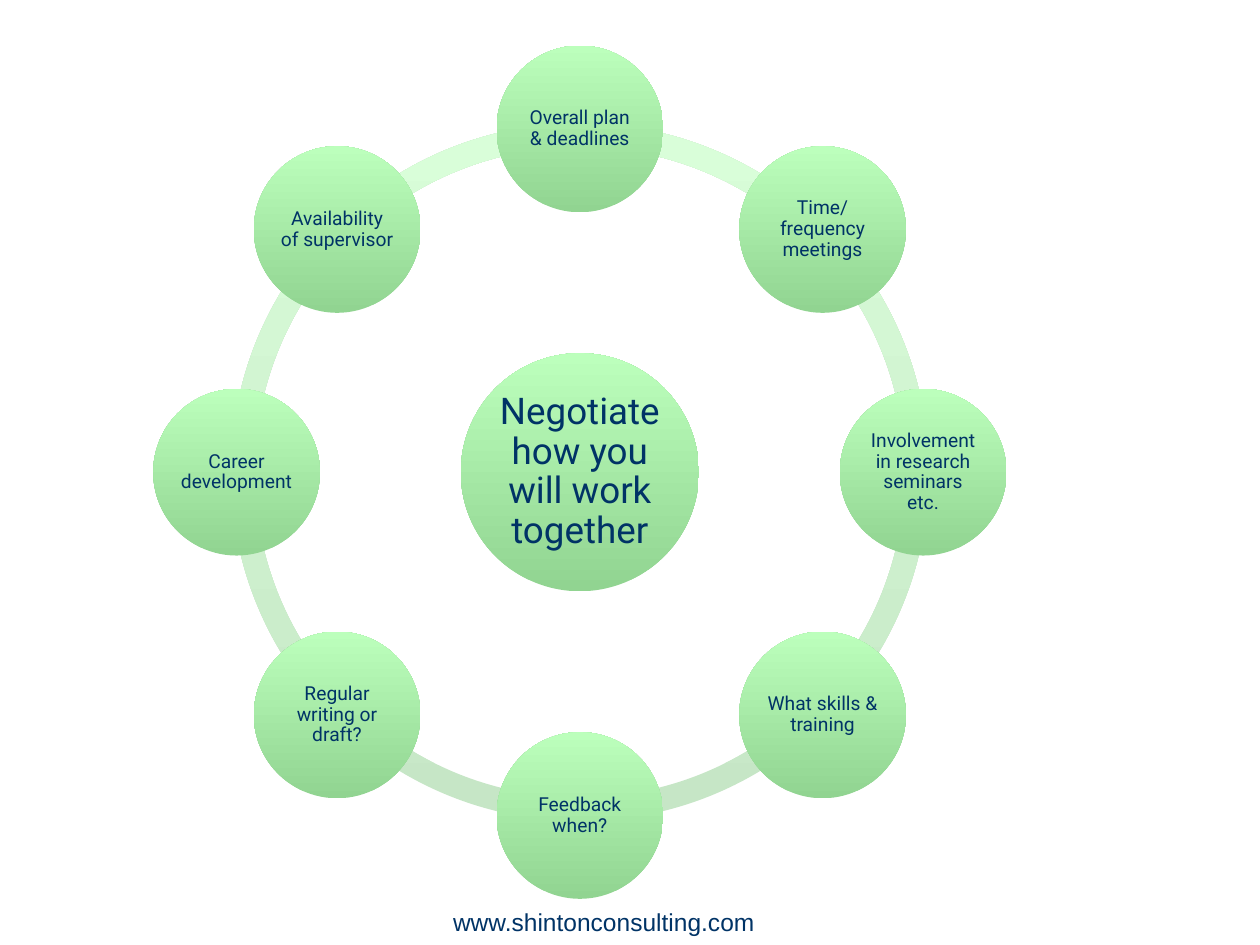
from math import cos, radians, sin

from pptx import Presentation
from pptx.dml.color import RGBColor
from pptx.enum.shapes import MSO_SHAPE as Preset
from pptx.enum.text import MSO_ANCHOR as Anchor, PP_ALIGN as Align
from pptx.util import Cm, Pt

INK = "003366"
TOPICS = [
    "Overall plan & deadlines",
    "Time/frequency meetings",
    "Involvement in research seminars etc.",
    "What skills & training",
    "Feedback when?",
    "Regular writing or draft?",
    "Career development",
    "Availability of supervisor",
]
FULL_TURN = 216


def rgb(color):
    return RGBColor.from_string(color)


def write(shape, words, font_name, size, inset, anchor):
    frame = shape.text_frame
    frame.word_wrap = True
    frame.vertical_anchor = anchor
    frame.margin_left = frame.margin_right = Cm(inset)
    frame.margin_top = frame.margin_bottom = Cm(inset)
    paragraph = frame.paragraphs[0]
    paragraph.text = words
    paragraph.alignment = Align.CENTER
    paragraph.font.name = font_name
    paragraph.font.size = Pt(size)
    paragraph.font.color.rgb = rgb(INK)
    return paragraph


def add_shaded(shapes, preset, center_x, center_y, diameter, bottom, top):
    shape = shapes.add_shape(
        preset, Cm(center_x - diameter / 2), Cm(center_y - diameter / 2),
        Cm(diameter), Cm(diameter))
    shape.shadow.inherit = False
    shape.line.fill.background()
    shape.fill.gradient()
    shape.fill.gradient_angle = 90
    for stop, color in zip(shape.fill.gradient_stops, (bottom, top)):
        stop.color.rgb = rgb(color)
    return shape


def add_circle(shapes, words, center_x, center_y, diameter, size, inset):
    circle = add_shaded(shapes, Preset.OVAL, center_x, center_y, diameter,
                        "91D491", "BCFFBC")
    write(circle, words, "Roboto", size, inset, Anchor.MIDDLE).line_spacing = 0.9


def add_wheel(slide, left, top, extent):
    shapes = slide.shapes.add_group_shape().shapes
    center_x, center_y = left + extent / 2, top + extent / 2
    node = 3.36
    orbit = (extent - node) / 2
    sweep = FULL_TURN / len(TOPICS)

    for index in range(len(TOPICS)):
        start = (135 - index * sweep) % FULL_TURN
        arc = add_shaded(shapes, Preset.BLOCK_ARC, center_x, center_y, 14.07,
                         "C6E6C6", "D9FED9")
        arc.adjustments[0] = start
        arc.adjustments[1] = (start + sweep) % FULL_TURN
        arc.adjustments[2] = 0.034

    add_circle(shapes, "Negotiate how you will work together",
               center_x, center_y, 4.8, 21, 0.07)
    for index, topic in enumerate(TOPICS):
        angle = radians(index * 360 / len(TOPICS) - 90)
        add_circle(shapes, topic, center_x + orbit * cos(angle),
                   center_y + orbit * sin(angle), node, 11, 0.04)


def add_web_address(slide, left, top, width, height):
    address = slide.shapes.add_textbox(Cm(left), Cm(top), Cm(width), Cm(height))
    write(address, "www.shintonconsulting.com", "Arial", 14, 0.13, Anchor.BOTTOM)


def main():
    deck = Presentation()
    deck.slide_width, deck.slide_height = Cm(25.4), Cm(19.05)
    slide = deck.slides.add_slide(deck.slide_layouts[6])
    add_web_address(slide, 8.15, 18.19, 8.05, 0.81)
    add_wheel(slide, 3.09, 0.92, 17.2)
    deck.save("out.pptx")


if __name__ == "__main__":
    main()
